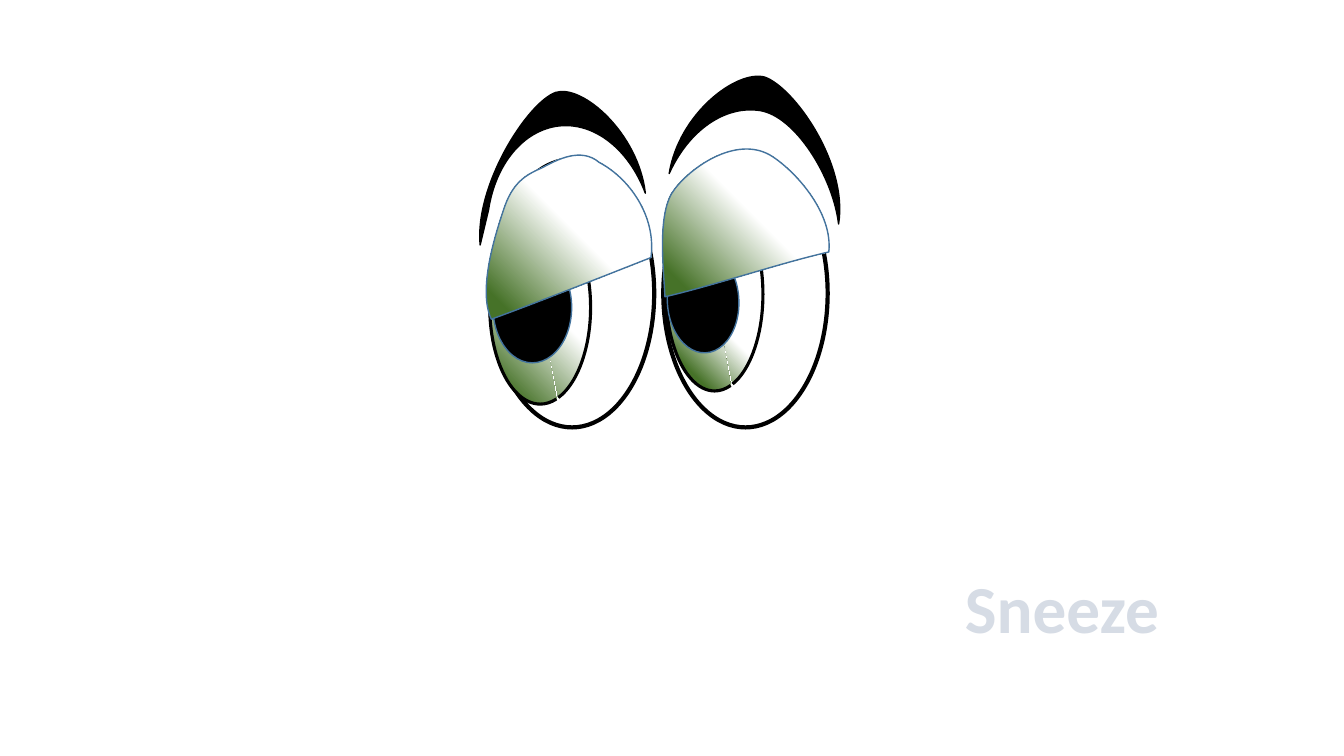
from pptx import Presentation
from pptx.dml.color import RGBColor
from pptx.enum.shapes import MSO_SHAPE
from pptx.enum.text import PP_ALIGN
from pptx.oxml import parse_xml
from pptx.oxml.ns import nsdecls, qn
from pptx.util import Pt

OVAL, ARC = MSO_SHAPE.OVAL, MSO_SHAPE.ARC
CENTER = PP_ALIGN.CENTER

THEME = {
    "black": "000000", "white": "FFFFFF", "edge": "43739E",
    "ink": "44546A", "pale": "D6DCE5", "rim": "333F50",
    "lid": [(47, "FFFFFF"), (89, "467228")],
    "iris": [(59, "FFFFFF"), (85, "467228"), (89, "467228"), (100, "BF9000")],
    "font": "Calibri", "size": Pt(48),
}


def paint(shape, fill, line, width):
    """Fill with one colour or a list of stops that spreads from the top right."""
    shape.shadow.inherit = False
    shape.line.color.rgb = RGBColor.from_string(line)
    shape.line.width = Pt(width)
    if isinstance(fill, str):
        shape.fill.solid()
        shape.fill.fore_color.rgb = RGBColor.from_string(fill)
        return
    shape.fill.gradient()
    props = shape._element.spPr
    stops = "".join(f'<a:gs pos="{pos * 1000}"><a:srgbClr val="{color}"/></a:gs>'
                    for pos, color in fill)
    props.replace(props.find(qn("a:gradFill")), parse_xml(
        f'<a:gradFill {nsdecls("a")} rotWithShape="1"><a:gsLst>{stops}</a:gsLst>'
        '<a:path path="circle"><a:fillToRect l="100000" b="100000"/></a:path>'
        '</a:gradFill>'))


def curve(start, knots):
    """Draw a closed outline; each three knots make one Bezier curve."""
    pen = shapes.build_freeform(*start, scale=Pt(1))
    pen.add_line_segments(knots, close=True)
    shape = pen.convert_to_shape()
    lines = list(shape._element.iter(qn("a:lnTo")))
    for i in range(0, len(lines), 3):
        bend = lines[i]
        for step in lines[i + 1:i + 3]:
            bend.append(step[0])
            step.getparent().remove(step)
        bend.tag = qn("a:cubicBezTo")
    return shape


deck = Presentation()
deck.slide_width, deck.slide_height = Pt(960), Pt(540)
shapes = deck.slides.add_slide(deck.slide_layouts[6]).shapes

# Caption
box = shapes.add_textbox(Pt(668.9), Pt(401), Pt(179.3), Pt(87.1))
box.text_frame.word_wrap = True
para = box.text_frame.paragraphs[0]
para.alignment = CENTER
run = para.add_run()
run.text = "Sneeze"
run.font.name, run.font.size, run.font.bold = THEME["font"], THEME["size"], True
mark = run._r.get_or_add_rPr()
mark.insert(0, parse_xml(
    f'<a:ln {nsdecls("a")} w="12700"><a:solidFill>'
    f'<a:srgbClr val="{THEME["rim"]}"/></a:solidFill></a:ln>'))
mark.insert(1, parse_xml(
    f'<a:pattFill {nsdecls("a")} prst="dkUpDiag">'
    f'<a:fgClr><a:srgbClr val="{THEME["ink"]}"/></a:fgClr>'
    f'<a:bgClr><a:srgbClr val="{THEME["pale"]}"/></a:bgClr></a:pattFill>'))

# Right brow
brow = curve((478, 123.8), [
    (484.6, 81.4), (526.3, 49.7), (546.5, 55.4),
    (566.6, 61.9), (605.5, 117.4), (599, 159.8),
    (594.7, 126), (568.1, 82.8), (542.9, 79.2),
    (517.7, 74.9), (491.8, 92.9), (478, 123.8)])
paint(brow, THEME["black"], THEME["black"], 1)

# Eyeballs
for left in (349.9, 473.8):
    ball = shapes.add_shape(OVAL, Pt(left), Pt(113.8), Pt(117.4), Pt(191.5))
    paint(ball, THEME["white"], THEME["black"], 3)

# Irises and pupils, right then left
eyes = [
    ((475.9, 141.1, 69.1, 138.2), THEME["iris"], (465.1, 189.4, 74.2, 51.1), 87.2),
    ((349.9, 150.5, 72, 138.2), THEME["lid"], (340.6, 191.5, 79.2, 56.2), 90),
]
for ring, fill, spot, turn in eyes:
    iris = shapes.add_shape(ARC, *map(Pt, ring))
    iris.adjustments[0], iris.adjustments[1] = 47.99, 47.17
    paint(iris, fill, THEME["black"], 2.25)
    pupil = shapes.add_shape(OVAL, *map(Pt, spot))
    pupil.rotation = turn
    paint(pupil, THEME["black"], THEME["edge"], 1)

# Eyelids, left then right
lids = [
    ((350.6, 228.2), [
        (340.6, 207.4), (353.5, 167), (360, 149),
        (365.8, 131), (375.1, 125.3), (386.6, 119.5),
        (398.2, 113.8), (415.4, 105.1), (428.4, 115.9),
        (449.3, 126.7), (468.7, 154.1), (465.1, 184.3),
        (432, 196.6), (383.8, 216), (350.6, 228.2)]),
    ((475.2, 211.7), [
        (474.5, 190.8), (469.4, 151.2), (482.4, 134.6),
        (495.4, 118.1), (528.5, 96.5), (551.5, 111.6),
        (570.2, 123.8), (594.7, 152.6), (591.8, 180),
        (557.3, 187.9), (509.8, 203.8), (475.2, 211.7)]),
]
for start, knots in lids:
    paint(curve(start, knots), THEME["lid"], THEME["edge"], 1)

# Left brow
brow = curve((343.4, 175), [
    (339.1, 132.5), (377.3, 72.7), (396.7, 66.2),
    (416.2, 60.5), (456.5, 95), (460.8, 137.5),
    (448.6, 105.8), (424.1, 87.1), (398.9, 90),
    (374.4, 92.9), (354.2, 116.6), (349.2, 149.8),
    (349.2, 149.8), (343.4, 175), (343.4, 175)])
paint(brow, THEME["black"], THEME["black"], 1)

deck.save("out.pptx")
